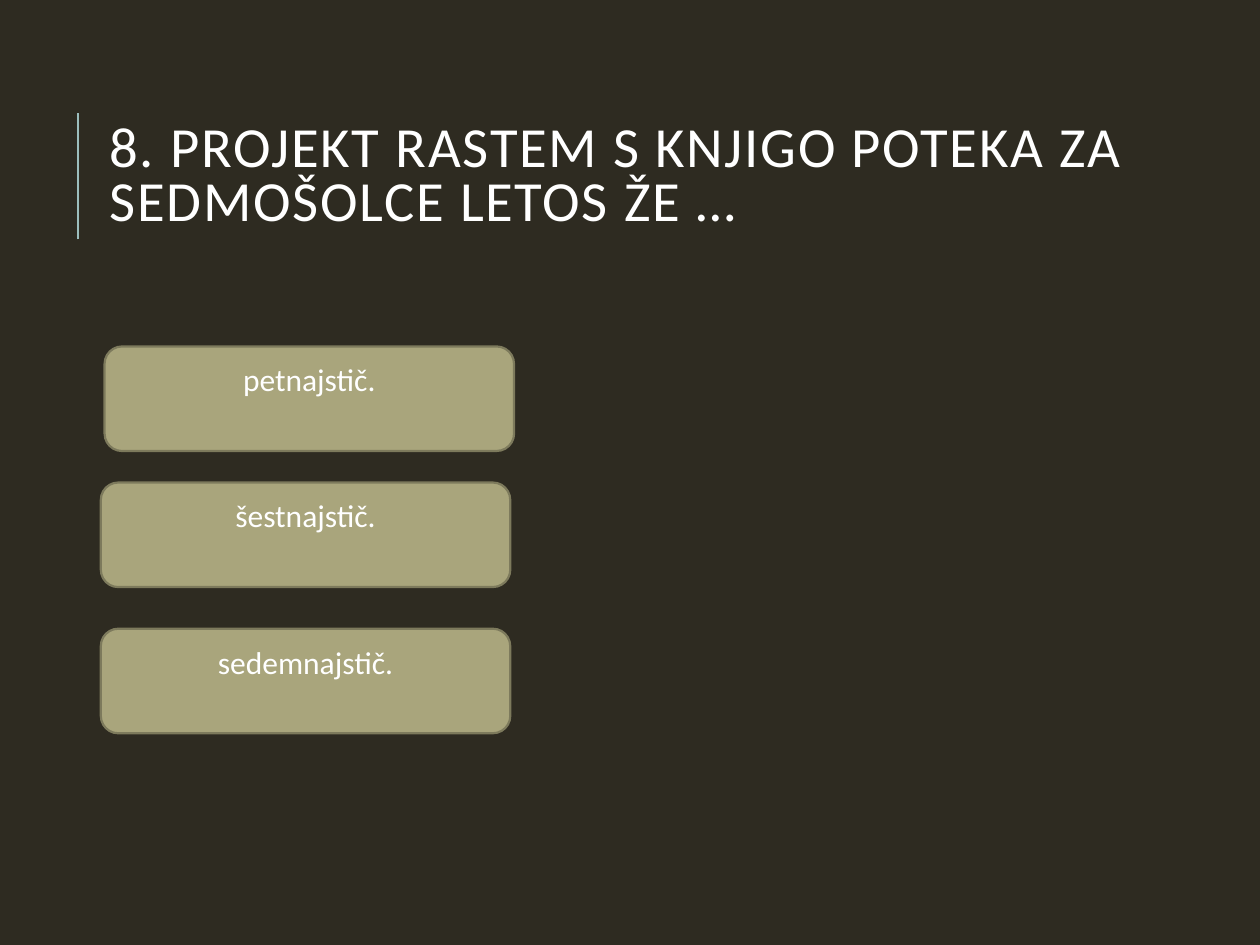
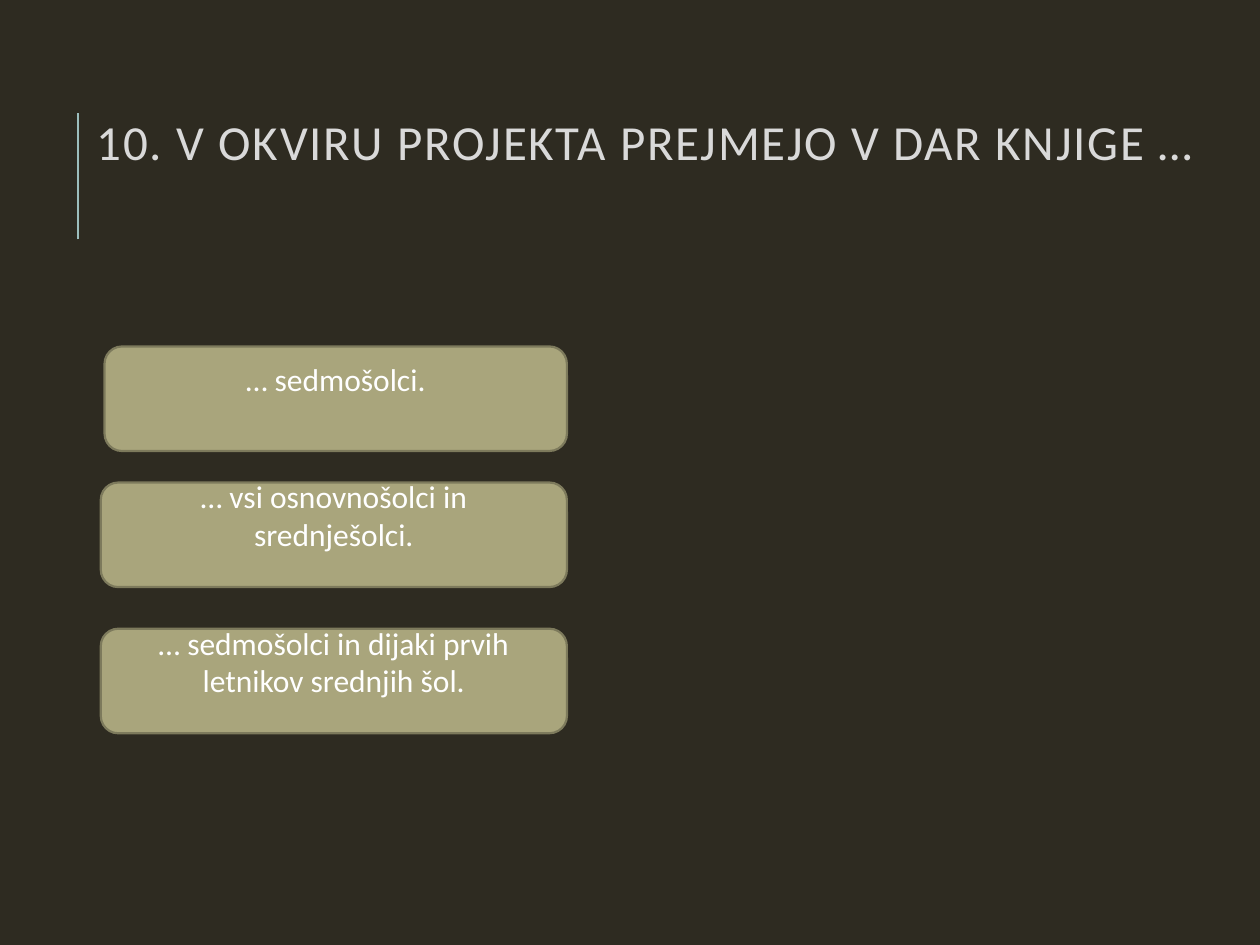
"""Build two quiz slides, each with a question and three answer boxes."""
import pptx
import pptx.util
import pptx.dml.color
import pptx.enum.shapes
import pptx.enum.text
import lxml.etree
from dataclasses import dataclass

QUIZ = [
    {"ask": "8. PROJEKT RASTEM S KNJIGO POTEKA ZA SEDMOŠOLCE LETOS ŽE …",
     "spot": (0.77, 1.0), "size": 32.4, "tint": "FFFFFF", "edge": 4.05,
     "picks": ["petnajstič.", "šestnajstič.", "sedemnajstič."],
     "first_wide": 3.25},
    {"ask": "10. V OKVIRU PROJEKTA PREJMEJO V DAR KNJIGE …",
     "spot": (0.67, 0.75), "size": 28, "tint": "D9D9D9", "edge": 4.5,
     "picks": ["… sedmošolci.", "… vsi osnovnošolci in srednješolci.",
               "… sedmošolci in dijaki prvih letnikov srednjih šol."],
     "first_wide": 3.67},
]
LEFTS = (0.83, 0.8, 0.8)
TOPS = (2.75, 3.83, 4.99)
WIDE, HIGH = 10, 7.5
ASK_WIDE, ROW = 9.33, 0.83
RULE_X, RULE_TOP, RULE_END = 0.62, 0.9, 1.9


@dataclass(frozen=True)
class Theme:
    back: str = "2E2B21"
    rule: str = "9CBEBD"
    fill: str = "A9A57C"
    line: str = "7D7A5C"
    text: str = "FFFFFF"
    font: str = "Calibri"
    pick: float = 18
    rule_pt: float = 1.5
    line_pt: float = 1.25
    foot: float = 0.36


THEME = Theme()
inch = pptx.util.Inches
rgb = pptx.dml.color.RGBColor.from_string


def write(frame, words, size, tint):
    frame.word_wrap = True
    frame.vertical_anchor = pptx.enum.text.MSO_ANCHOR.MIDDLE
    para = frame.paragraphs[0]
    run = para.add_run()
    run.text = words
    run.font.name = THEME.font
    run.font.size = pptx.util.Pt(size)
    run.font.color.rgb = rgb(tint)
    return para, run


def add_rule(slide):
    rule = slide.shapes.add_connector(
        pptx.enum.shapes.MSO_CONNECTOR.STRAIGHT,
        inch(RULE_X), inch(RULE_END), inch(RULE_X), inch(RULE_TOP))
    rule.line.color.rgb = rgb(THEME.rule)
    rule.line.width = pptx.util.Pt(THEME.rule_pt)
    props = rule._element.spPr
    lxml.etree.SubElement(props, pptx.oxml.ns.qn("a:effectLst"))


def add_ask(slide, item):
    left, top = item["spot"]
    box = slide.shapes.add_textbox(inch(left), inch(top), inch(ASK_WIDE), inch(ROW))
    para, run = write(box.text_frame, item["ask"], item["size"], item["tint"])
    para.line_spacing = 0.8
    run.font._element.set("spc", "100")


def add_pick(slide, words, left, top, wide):
    box = slide.shapes.add_shape(
        pptx.enum.shapes.MSO_SHAPE.ROUNDED_RECTANGLE,
        inch(left), inch(top), inch(wide), inch(ROW))
    box.shadow.inherit = False
    box.fill.solid()
    box.fill.fore_color.rgb = rgb(THEME.fill)
    box.line.color.rgb = rgb(THEME.line)
    box.line.width = pptx.util.Pt(THEME.line_pt)
    box.text_frame.margin_bottom = inch(THEME.foot)
    para, _ = write(box.text_frame, words, THEME.pick, THEME.text)
    para.alignment = pptx.enum.text.PP_ALIGN.CENTER


def main():
    deck = pptx.Presentation()
    deck.slide_width, deck.slide_height = inch(WIDE), inch(HIGH)
    for item in QUIZ:
        slide = deck.slides.add_slide(deck.slide_layouts[6])
        slide.background.fill.solid()
        slide.background.fill.fore_color.rgb = rgb(THEME.back)
        add_rule(slide)
        add_ask(slide, item)
        wides = [item["first_wide"]] + [item["edge"] - x for x in LEFTS[1:]]
        for pick in zip(item["picks"], LEFTS, TOPS, wides):
            add_pick(slide, *pick)
    deck.save("out.pptx")


if __name__ == "__main__":
    main()
